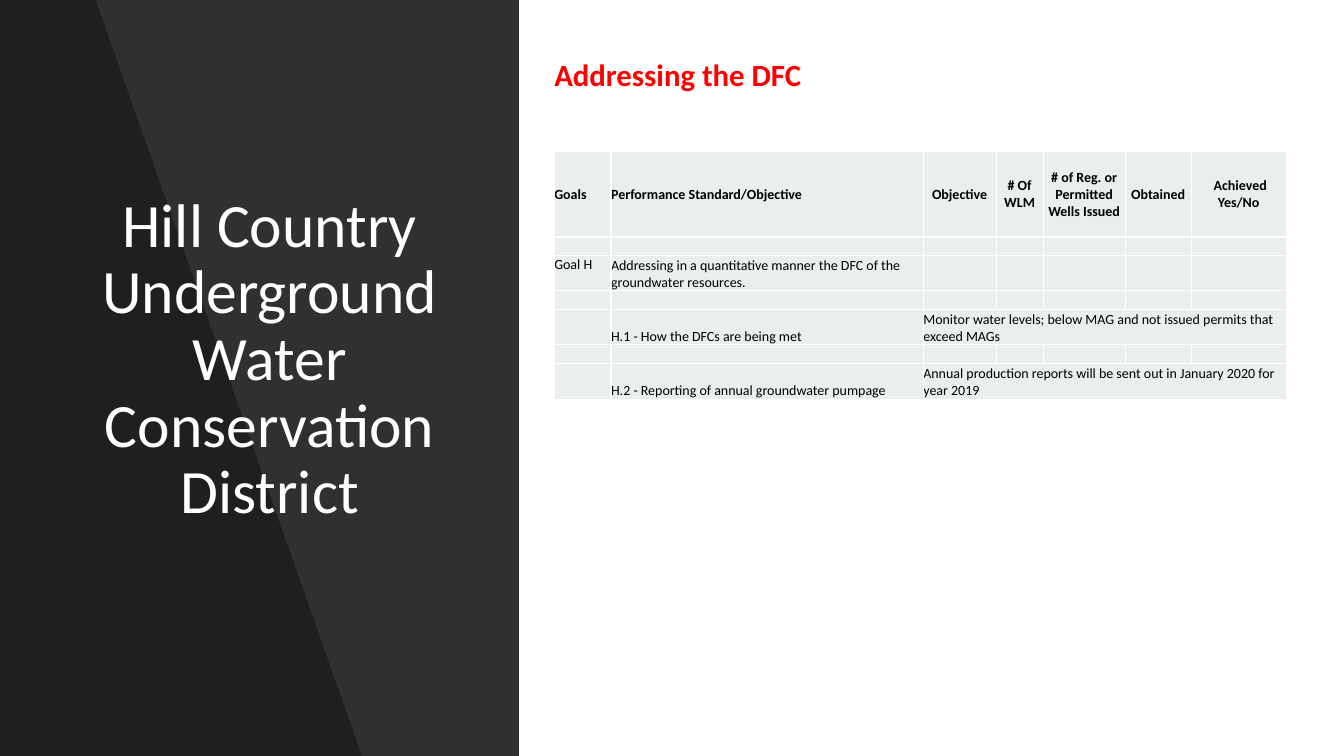
"""Build the slide on how the district addresses its DFC goals."""
from dataclasses import dataclass

from lxml.etree import SubElement
from pptx import Presentation
from pptx.dml.color import RGBColor
from pptx.enum.shapes import MSO_SHAPE as Preset
from pptx.enum.text import MSO_ANCHOR as Anchor, MSO_AUTO_SIZE as AutoSize, PP_ALIGN as Align
from pptx.oxml.ns import qn
from pptx.util import Cm, Pt

BLACK = RGBColor(0x00, 0x00, 0x00)
WHITE = RGBColor(0xFF, 0xFF, 0xFF)
RED = RGBColor(0xFF, 0x00, 0x00)
MINT = RGBColor(0xE8, 0xEF, 0xEC)
FONT = "Calibri"
SLIDE_WIDTH, SLIDE_HEIGHT = Cm(33.87), Cm(19.05)
CELL_SIZE = Pt(10)
COLUMN_WIDTHS = (1.43, 7.87, 1.84, 1.19, 2.06, 1.67, 2.39)
ROW_HEIGHTS = (2.16, 0.46, 0.9, 0.46, 0.9, 0.46, 0.91)


@dataclass(frozen=True)
class Entry:
    row: int
    column: int
    text: str
    anchor: Anchor = Anchor.BOTTOM
    align: Align = Align.LEFT
    bold: bool = False
    to_last_column: bool = False


HEADINGS = ("Goals", "Performance Standard/Objective", "Objective", "# Of WLM",
            "# of Reg. or Permitted Wells Issued", "Obtained", " Achieved Yes/No")
ENTRIES = [
    Entry(0, column, heading, Anchor.MIDDLE, Align.LEFT if column < 2 else Align.CENTER, True)
    for column, heading in enumerate(HEADINGS)
] + [
    Entry(2, 0, "Goal H", Anchor.TOP),
    Entry(2, 1, "Addressing in a quantitative manner the DFC of the groundwater resources."),
    Entry(4, 1, "H.1 - How the DFCs are being met"),
    Entry(4, 2, "Monitor water levels; below MAG and not issued permits that exceed MAGs",
          to_last_column=True),
    Entry(6, 1, "H.2 - Reporting of annual groundwater pumpage"),
    Entry(6, 2, "Annual production reports will be sent out in January 2020 for year 2019",
          to_last_column=True),
]


def add_run(paragraph, text: str, size: Pt, color: RGBColor, bold: bool = False) -> None:
    run = paragraph.add_run()
    run.text = text
    run.font.name, run.font.size, run.font.bold = FONT, size, bold
    run.font.color.rgb = color


def paint(shape, color: RGBColor, opacity: int = 100) -> None:
    shape.shadow.inherit = False
    shape.line.fill.background()
    shape.fill.solid()
    shape.fill.fore_color.rgb = color
    if opacity < 100:
        tint = shape.fill._xPr.find(f".//{qn('a:srgbClr')}")
        SubElement(tint, qn("a:alpha"), val=str(opacity * 1000))


def add_panels(shapes) -> None:
    for width, color, opacity in ((SLIDE_WIDTH, WHITE, 100), (Cm(13.08), BLACK, 81)):
        panel = shapes.add_shape(Preset.RECTANGLE, 0, 0, width, SLIDE_HEIGHT)
        paint(panel, color, opacity)
    wedge = shapes.build_freeform(0, 0)
    wedge.add_line_segments(
        [(Cm(2.41), 0), (Cm(9.12), SLIDE_HEIGHT), (0, SLIDE_HEIGHT)], close=True)
    paint(wedge.convert_to_shape(), BLACK, 35)


def add_title(shapes) -> None:
    district = shapes.title
    district.left, district.top, district.width, district.height = (
        Cm(2.24), Cm(1.78), Cm(9.12), Cm(14.61))
    shapes.element.append(district.element)
    frame = district.text_frame
    frame.word_wrap, frame.auto_size = True, AutoSize.NONE
    frame.vertical_anchor = Anchor.MIDDLE
    paragraph = frame.paragraphs[0]
    paragraph.alignment, paragraph.line_spacing = Align.CENTER, 0.9
    add_run(paragraph, "Hill Country Underground Water Conservation District", Pt(44), WHITE)


def add_heading(shapes) -> None:
    frame = shapes.add_textbox(Cm(12.7), Cm(1.27), Cm(8.08), Cm(1.19)).text_frame
    frame.word_wrap, frame.auto_size = False, AutoSize.SHAPE_TO_FIT_TEXT
    frame.margin_left = 0
    paragraph = frame.paragraphs[0]
    paragraph.level = 1
    paragraph._p.get_or_add_pPr().set("marL", str(Cm(1.27)))
    add_run(paragraph, "Addressing the DFC", Pt(22), RED, True)


def style_cell(cell) -> None:
    cell.margin_left = cell.margin_bottom = 0
    cell.margin_top = cell.margin_right = Cm(0.02)
    properties = cell._tc.get_or_add_tcPr()
    for side in ("lnL", "lnR", "lnT", "lnB"):
        border = SubElement(properties, qn(f"a:{side}"), w=str(Pt(1)))
        color = SubElement(SubElement(border, qn("a:solidFill")), qn("a:srgbClr"))
        color.set("val", str(WHITE))
    cell.fill.solid()
    cell.fill.fore_color.rgb = MINT
    SubElement(cell.text_frame.paragraphs[0]._p, qn("a:endParaRPr"),
               sz=str(int(CELL_SIZE.pt * 100)))


def add_goals_table(shapes) -> None:
    goals = shapes.add_table(len(ROW_HEIGHTS), len(COLUMN_WIDTHS), Cm(13.97), Cm(3.81),
                             Cm(sum(COLUMN_WIDTHS)), Cm(sum(ROW_HEIGHTS))).table
    goals.first_row = goals.horz_banding = False
    for column, width in zip(goals.columns, COLUMN_WIDTHS):
        column.width = Cm(width)
    for row, height in zip(goals.rows, ROW_HEIGHTS):
        row.height = Cm(height)
    for cell in goals.iter_cells():
        style_cell(cell)
    for entry in ENTRIES:
        cell = goals.cell(entry.row, entry.column)
        if entry.to_last_column:
            cell.merge(goals.cell(entry.row, len(COLUMN_WIDTHS) - 1))
        cell.vertical_anchor = entry.anchor
        paragraph = cell.text_frame.paragraphs[0]
        paragraph.alignment = entry.align
        add_run(paragraph, entry.text, CELL_SIZE, BLACK, entry.bold)


def main() -> None:
    deck = Presentation()
    deck.slide_width, deck.slide_height = SLIDE_WIDTH, SLIDE_HEIGHT
    slide = deck.slides.add_slide(deck.slide_layouts[5])
    slide.background.fill.solid()
    slide.background.fill.fore_color.rgb = BLACK
    add_panels(slide.shapes)
    add_title(slide.shapes)
    add_heading(slide.shapes)
    add_goals_table(slide.shapes)
    deck.save("out.pptx")


if __name__ == "__main__":
    main()
